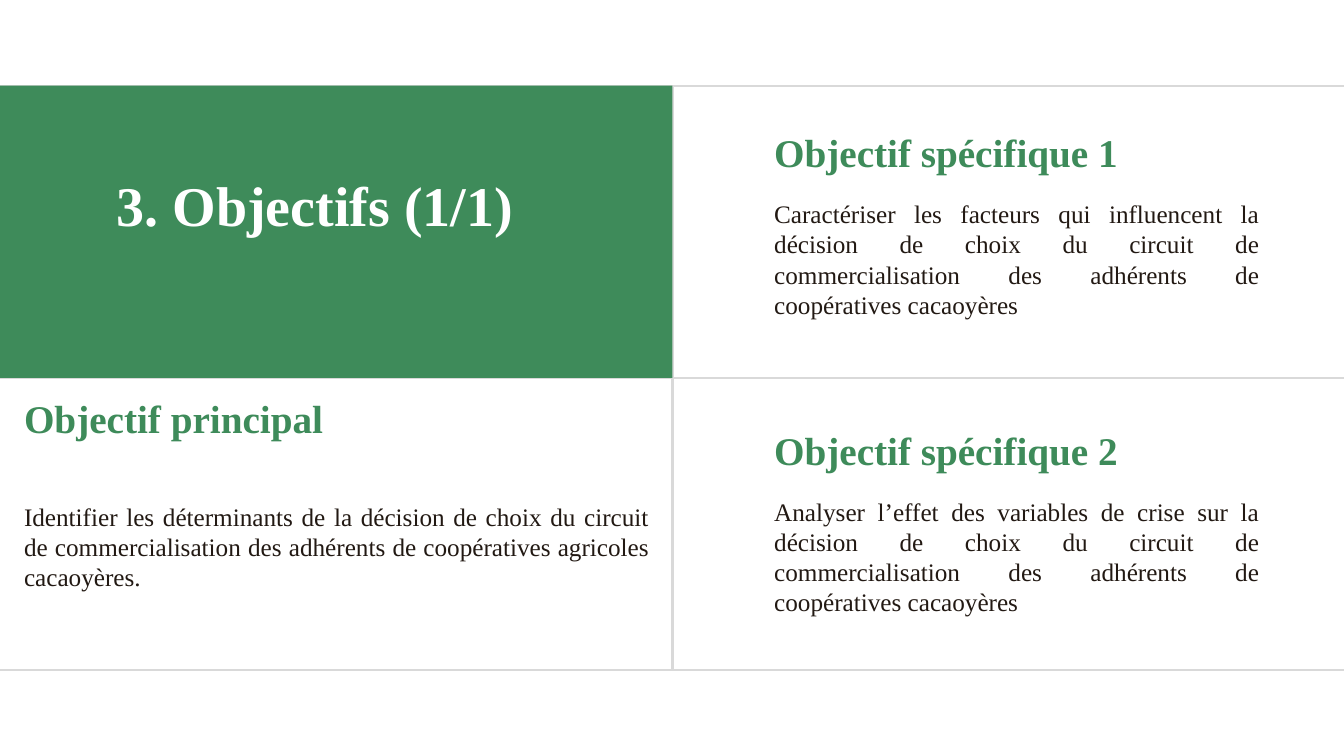
from dataclasses import dataclass

from lxml.etree import SubElement
from pptx import Presentation
from pptx.dml.color import RGBColor
from pptx.enum.shapes import MSO_CONNECTOR, MSO_SHAPE
from pptx.enum.text import MSO_AUTO_SIZE, PP_ALIGN
from pptx.oxml.ns import qn
from pptx.slide import Slide
from pptx.util import Inches, Pt

GREEN = RGBColor(0x3E, 0x8B, 0x5A)
GREY = RGBColor(0xD9, 0xD9, 0xD9)
INK = RGBColor(0x22, 0x19, 0x13)
WHITE = RGBColor(0xFF, 0xFF, 0xFF)
FONT = "Times New Roman"

# Grid of two columns and two rows
WIDTH, HEIGHT = 13.33, 7.5
MID = 6.67
TOP, ROW = 0.85, 2.9
LOW = TOP + 2 * ROW


@dataclass
class Box:
    left: float
    top: float
    width: float
    height: float


@dataclass
class Goal:
    title: str
    text: str
    head: Box
    body: Box


GOALS = [
    Goal("Objectif spécifique 1",
         "Caractériser les facteurs qui influencent la décision de choix du circuit "
         "de commercialisation des adhérents de coopératives cacaoyères",
         Box(7.58, 1.22, 4.94, 0.57), Box(7.58, 1.92, 5.01, 1.31)),
    Goal("Objectif principal",
         "Identifier les déterminants de la décision de choix du circuit de "
         "commercialisation des adhérents de coopératives agricoles cacaoyères.",
         Box(0.14, 3.86, 6.31, 0.57), Box(0.14, 4.92, 6.4, 1.01)),
    Goal("Objectif spécifique 2",
         "Analyser l’effet des variables de crise sur la décision de choix du circuit "
         "de commercialisation des adhérents de coopératives cacaoyères",
         Box(7.58, 4.18, 4.94, 0.57), Box(7.58, 4.87, 5.01, 1.31)),
]


def add_rule(slide: Slide, x1: float, y1: float, x2: float, y2: float) -> None:
    rule = slide.shapes.add_connector(
        MSO_CONNECTOR.STRAIGHT, Inches(x1), Inches(y1), Inches(x2), Inches(y2))
    rule.line.color.rgb = GREY
    rule.line.width = Pt(1.5)
    SubElement(rule._element.spPr, qn("a:effectLst"))


def add_text(slide: Slide, text: str, box: Box, size: int, color: RGBColor,
             bold: bool = True, align: PP_ALIGN = PP_ALIGN.LEFT) -> None:
    shape = slide.shapes.add_textbox(
        Inches(box.left), Inches(box.top), Inches(box.width), Inches(box.height))
    frame = shape.text_frame
    frame.word_wrap = True
    frame.auto_size = MSO_AUTO_SIZE.SHAPE_TO_FIT_TEXT
    para = frame.paragraphs[0]
    para.text = text
    para.alignment = align
    para.font.name = FONT
    para.font.size = Pt(size)
    para.font.bold = bold
    para.font.color.rgb = color


def add_goal(slide: Slide, goal: Goal) -> None:
    add_text(slide, goal.title, goal.head, 28, GREEN)
    add_text(slide, goal.text, goal.body, 18, INK, False, PP_ALIGN.JUSTIFY)


def main() -> None:
    deck = Presentation()
    deck.slide_width, deck.slide_height = Inches(WIDTH), Inches(HEIGHT)
    slide = deck.slides.add_slide(deck.slide_layouts[6])

    # Grid lines
    for row in range(3):
        add_rule(slide, 0, TOP + row * ROW, WIDTH, TOP + row * ROW)
    add_rule(slide, MID, LOW, MID, TOP)

    # Title panel
    panel = slide.shapes.add_shape(
        MSO_SHAPE.RECTANGLE, 0, Inches(TOP), Inches(MID), Inches(ROW))
    panel.shadow.inherit = False
    panel.fill.solid()
    panel.fill.fore_color.rgb = GREEN
    panel.line.fill.background()
    add_text(slide, "3. Objectifs (1/1)", Box(1.06, 1.64, 4.91, 0.77), 40, WHITE)

    # Goals
    for goal in GOALS:
        add_goal(slide, goal)

    deck.save("out.pptx")


if __name__ == "__main__":
    main()
